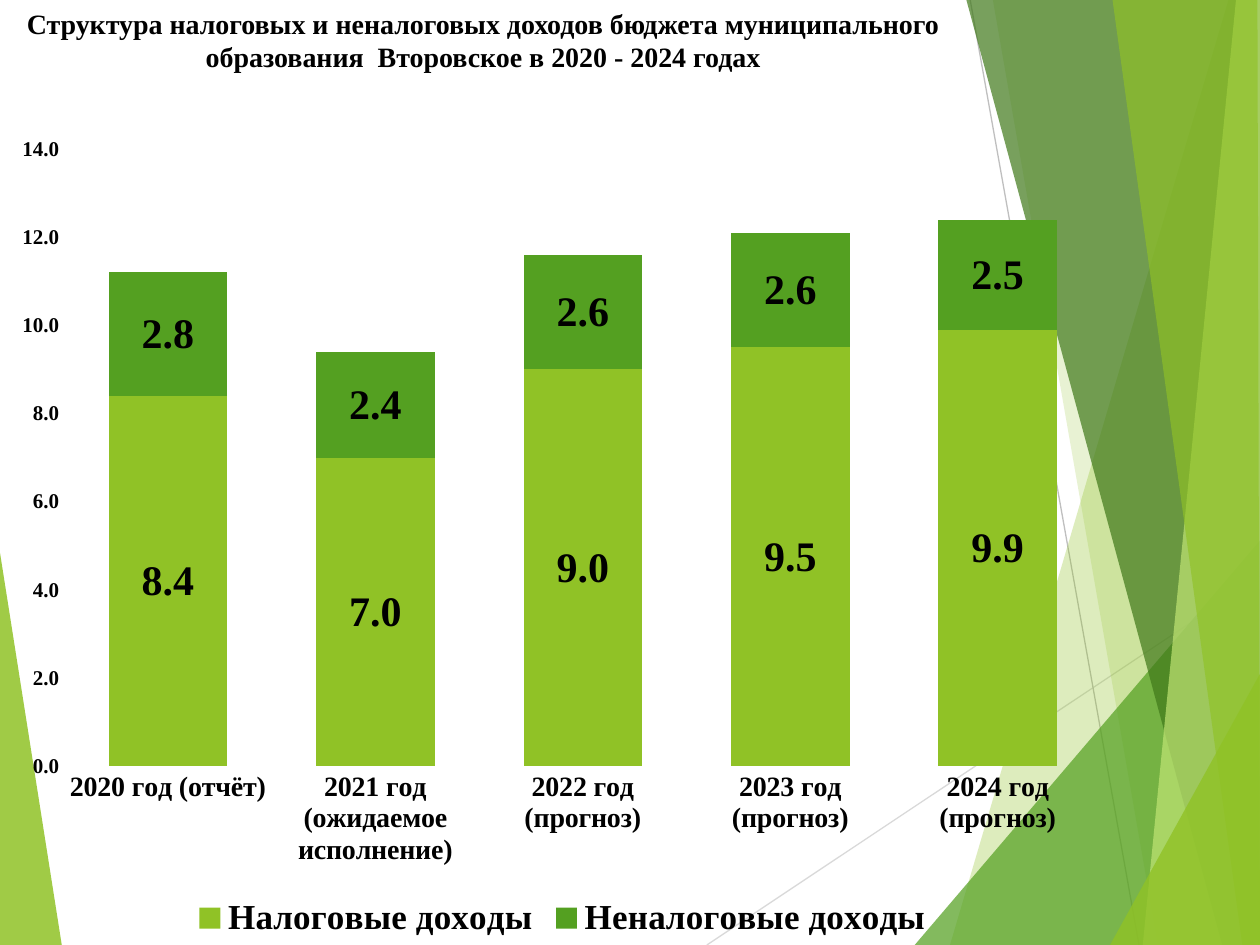
from lxml import etree
from pptx import Presentation
from pptx.chart.data import CategoryChartData
from pptx.dml.color import RGBColor
from pptx.enum.chart import XL_CHART_TYPE as ChartType
from pptx.enum.chart import XL_LEGEND_POSITION as LegendPosition
from pptx.enum.chart import XL_TICK_MARK as TickMark
from pptx.enum.shapes import MSO_CONNECTOR as Connector
from pptx.enum.text import MSO_ANCHOR as Anchor
from pptx.enum.text import PP_ALIGN as Align
from pptx.oxml.ns import qn
from pptx.util import Inches, Pt

WIDTH, HEIGHT = Inches(10), Inches(7.5)
FONT = "Times New Roman"
LIME, GREEN, DARK, PALE = "90C226", "54A021", "3F7819", "C0E474"

# Points are shares of the region's width and height.
LEFT_FACET = ([(0, 0.585), (0.049, 1), (0, 1)], LIME, 85)
RAYS = [((0.561, 1), (1, 0.61), "D9D9D9"), ((0.77, 0), (0.904, 1), "BFBFBF")]
RIGHT_FACETS = [
    ([(0.975, 0), (0.754, 1), (1, 1), (1, 0)], LIME, 30),
    ([(0.788, 0), (0.919, 1), (1, 1), (1, 0)], LIME, 20),
    ([(0.726, 1), (1, 0.572), (1, 1)], GREEN, 72),
    ([(0.767, 0), (0.97, 1), (1, 1), (1, 0)], DARK, 70),
    ([(0.981, 0), (0.907, 1), (1, 1), (1, 0)], PALE, 70),
    ([(0.883, 0), (0.986, 1), (1, 1), (0.998, 0)], LIME, 65),
    ([(0.881, 1), (1, 0.713), (1, 1)], LIME, 80),
]

TITLE = ("Структура налоговых и неналоговых доходов бюджета муниципального "
         "образования  Второвское в 2020 - 2024 годах")
YEARS = ["2020 год (отчёт)", "2021 год (ожидаемое исполнение)",
         "2022 год (прогноз)", "2023 год (прогноз)", "2024 год (прогноз)"]
REVENUES = [
    ("Налоговые доходы", [8.4, 7.0, 9.0, 9.5, 9.9], LIME),
    ("Неналоговые доходы", [2.8, 2.4, 2.6, 2.6, 2.5], GREEN),
]


def rgb(color):
    return RGBColor.from_string(color)


def style_font(font, size):
    font.name, font.size, font.bold = FONT, Pt(size), True
    font.color.rgb = rgb("000000")


def place(box, point):
    left, top, width, height = box
    return int(left + point[0] * width), int(top + point[1] * height)


def add_facet(slide, box, points, color, opacity):
    start, *others = [place(box, point) for point in points]
    builder = slide.shapes.build_freeform(*start)
    builder.add_line_segments(others)
    shape = builder.convert_to_shape()
    shape.shadow.inherit = False
    shape.line.fill.background()
    shape.fill.solid()
    shape.fill.fore_color.rgb = rgb(color)
    color_element = shape.fill._xPr.find(".//" + qn("a:srgbClr"))
    etree.SubElement(color_element, qn("a:alpha"), val=str(opacity * 1000))


def add_ray(slide, box, start, end, color):
    line = slide.shapes.add_connector(
        Connector.STRAIGHT, *place(box, start), *place(box, end))
    line.line.color.rgb = rgb(color)
    line.line.width = Pt(0.75)
    etree.SubElement(line._element.spPr, qn("a:effectLst"))


def add_backdrop(slide, box):
    add_facet(slide, box, *LEFT_FACET)
    for ray in RAYS:
        add_ray(slide, box, *ray)
    for facet in RIGHT_FACETS:
        add_facet(slide, box, *facet)


def add_title(slide, box):
    frame = slide.shapes.add_textbox(*box).text_frame
    frame.word_wrap = True
    frame.vertical_anchor = Anchor.TOP
    paragraph = frame.paragraphs[0]
    paragraph.text = TITLE
    paragraph.alignment = Align.CENTER
    style_font(paragraph.font, 16)


def set_plot_area(chart, **shares):
    """Fix the inner plot area as shares (x, y, w, h) of the chart."""
    plot_area = chart._chartSpace.chart.plotArea
    for old in plot_area.findall(qn("c:layout")):
        plot_area.remove(old)
    layout = etree.Element(qn("c:layout"))
    plot_area.insert(0, layout)
    manual = etree.SubElement(layout, qn("c:manualLayout"))
    settings = {"layoutTarget": "inner", "xMode": "edge", "yMode": "edge", **shares}
    for name, value in settings.items():
        etree.SubElement(manual, qn("c:" + name), val=str(value))


def add_revenue_chart(slide, box):
    data = CategoryChartData(number_format="0.0")
    data.categories = YEARS
    for name, values, _ in REVENUES:
        data.add_series(name, values)
    chart = slide.shapes.add_chart(ChartType.COLUMN_STACKED, *box, data).chart
    chart.has_title = False
    style_font(chart.font, 10)
    set_plot_area(chart, x=0.057, y=0.033, w=0.922, h=0.75)

    for axis, size in ((chart.category_axis, 16), (chart.value_axis, 12)):
        axis.major_tick_mark = axis.minor_tick_mark = TickMark.NONE
        axis.has_major_gridlines = False
        axis.format.line.fill.background()
        style_font(axis.tick_labels.font, size)
    scale = chart.value_axis
    scale.minimum_scale, scale.maximum_scale, scale.major_unit = 0, 14, 2
    scale.tick_labels.number_format = "0.0"
    scale.tick_labels.number_format_is_linked = False

    plot = chart.plots[0]
    plot.gap_width, plot.overlap, plot.vary_by_categories = 75, 100, False
    for series, (_, _, color) in zip(plot.series, REVENUES):
        series.format.fill.solid()
        series.format.fill.fore_color.rgb = rgb(color)
        labels = series.data_labels
        labels.show_value = True
        labels.number_format = "0.0"
        labels.number_format_is_linked = False
        style_font(labels.font, 24)

    chart.has_legend = True
    chart.legend.position = LegendPosition.BOTTOM
    chart.legend.include_in_layout = False
    style_font(chart.legend.font, 20)


def main():
    presentation = Presentation()
    presentation.slide_width, presentation.slide_height = WIDTH, HEIGHT
    slide = presentation.slides.add_slide(presentation.slide_layouts[6])
    add_backdrop(slide, (0, 0, WIDTH, HEIGHT))
    add_title(slide, (0, 0, int(WIDTH * 0.767), int(HEIGHT * 0.157)))
    chart_top = int(HEIGHT * 0.129)
    add_revenue_chart(slide, (0, chart_top, int(WIDTH * 0.893), HEIGHT - chart_top))
    presentation.save("out.pptx")


if __name__ == "__main__":
    main()
